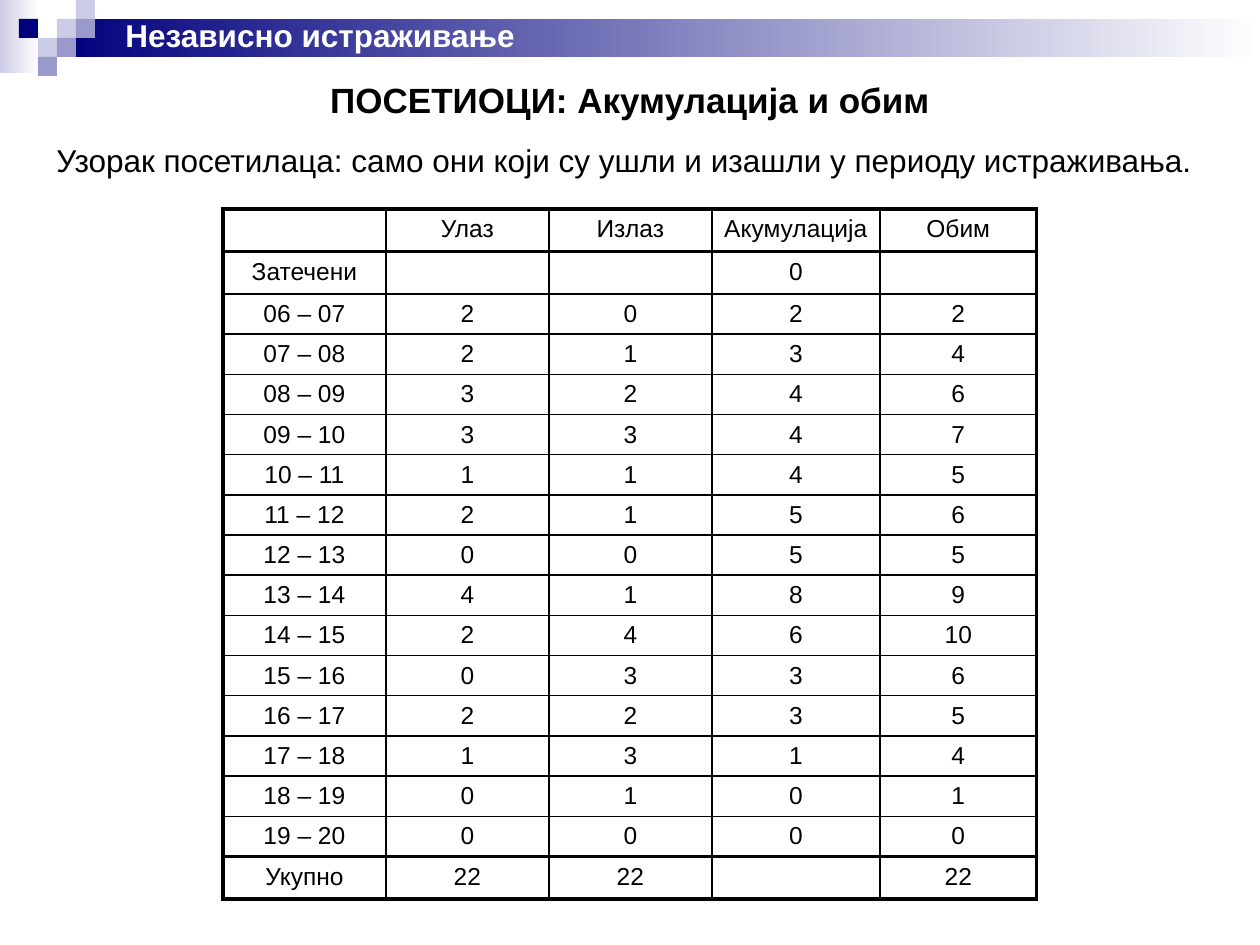
from dataclasses import dataclass

from lxml.etree import SubElement
from pptx import Presentation
from pptx.dml.color import RGBColor
from pptx.enum.shapes import MSO_SHAPE
from pptx.enum.text import MSO_ANCHOR, MSO_AUTO_SIZE, PP_ALIGN
from pptx.oxml.ns import qn
from pptx.util import Emu, Inches, Pt


@dataclass(frozen=True)
class Theme:
    """Colours, font and type sizes in points."""

    font: str = "Arial"
    ink: str = "000000"
    white: str = "FFFFFF"
    navy: str = "00007D"
    violet: str = "9999CC"
    lilac: str = "CCCCE6"
    title_size: int = 20
    text_size: int = 18
    table_size: int = 14
    thin: float = 1
    thick: float = 2.25


@dataclass(frozen=True)
class Area:
    """A rectangle in px."""

    left: int
    top: int
    width: int
    height: int

    def emu(self) -> tuple:
        """Return the rectangle in EMU."""
        return tuple(px(n) for n in (self.left, self.top, self.width, self.height))


@dataclass(frozen=True)
class Tile:
    """One square of the corner mosaic, by grid column and row."""

    column: int
    row: int
    color: str


THEME = Theme()
SCALE = Inches(10) / 1260
TILE = 19
TILES = [
    Tile(3, 1, THEME.lilac),
    Tile(4, 0, THEME.lilac),
    Tile(4, 1, THEME.violet),
    Tile(2, 2, THEME.lilac),
    Tile(1, 1, THEME.navy),
    Tile(3, 2, THEME.violet),
    Tile(2, 3, THEME.violet),
]
COLUMN_WIDTHS = [163, 163, 163, 168, 157]
ROW_HEIGHT = 40
HOURLY = [
    (2, 0, 2, 2), (2, 1, 3, 4), (3, 2, 4, 6), (3, 3, 4, 7), (1, 1, 4, 5),
    (2, 1, 5, 6), (0, 0, 5, 5), (4, 1, 8, 9), (2, 4, 6, 10), (0, 3, 3, 6),
    (2, 2, 3, 5), (1, 3, 1, 4), (0, 1, 0, 1), (0, 0, 0, 0),
]
ROWS = [
    ("", "Улаз", "Излаз", "Акумулација", "Обим"),
    ("Затечени", "", "", 0, ""),
    *((f"{hour:02} – {hour + 1:02}", *counts) for hour, counts in enumerate(HOURLY, 6)),
    ("Укупно", 22, 22, "", 22),
]


def px(length: int) -> Emu:
    """Turn px into EMU."""
    return Emu(round(length * SCALE))


def add_span(para, text: str, size: int, color: str, bold: bool = False) -> None:
    """Add one formatted run."""
    span = para.add_run()
    span.text = text
    span.font.name = THEME.font
    span.font.size = Pt(size)
    span.font.bold = bold
    span.font.color.rgb = RGBColor.from_string(color)


def add_block(page, area: Area, *colors: str) -> None:
    """Draw a borderless rectangle, plain or fading between two colours."""
    box = page.shapes.add_shape(MSO_SHAPE.RECTANGLE, *area.emu())
    box.shadow.inherit = False
    box.line.fill.background()
    if len(colors) == 1:
        box.fill.solid()
        box.fill.fore_color.rgb = RGBColor.from_string(colors[0])
        return
    box.fill.gradient()
    box.fill.gradient_angle = 0
    for stop, color in zip(box.fill.gradient_stops, colors):
        stop.color.rgb = RGBColor.from_string(color)


def add_text(page, area: Area, text: str, color: str, bold: bool = False) -> None:
    """Add a wrapped line of running text."""
    frame = page.shapes.add_textbox(*area.emu()).text_frame
    frame.word_wrap = True
    frame.auto_size = MSO_AUTO_SIZE.SHAPE_TO_FIT_TEXT
    add_span(frame.paragraphs[0], text, THEME.text_size, color, bold)


def set_title(page, area: Area, text: str) -> None:
    """Place and fill the title placeholder."""
    title = page.shapes.title
    title.left, title.top, title.width, title.height = area.emu()
    title.text_frame.vertical_anchor = MSO_ANCHOR.MIDDLE
    para = title.text_frame.paragraphs[0]
    para.alignment = PP_ALIGN.CENTER
    add_span(para, text, THEME.title_size, THEME.ink, bold=True)


def set_borders(cell, thick_sides: dict[str, bool]) -> None:
    """Line the four sides of a cell, heavy where flagged."""
    properties = cell._tc.get_or_add_tcPr()
    for side, heavy in thick_sides.items():
        width = Pt(THEME.thick if heavy else THEME.thin)
        line = SubElement(properties, qn(f"a:ln{side}"), w=str(width))
        fill = SubElement(line, qn("a:solidFill"))
        SubElement(fill, qn("a:srgbClr"), val=THEME.ink)


def add_counts(page, left: int, top: int) -> None:
    """Build the table of visitor counts."""
    last_row, last_column = len(ROWS) - 1, len(COLUMN_WIDTHS) - 1
    area = Area(left, top, sum(COLUMN_WIDTHS), ROW_HEIGHT * len(ROWS))
    table = page.shapes.add_table(len(ROWS), len(COLUMN_WIDTHS), *area.emu()).table
    table.first_row = table.horz_banding = False
    for column, width in zip(table.columns, COLUMN_WIDTHS):
        column.width = px(width)
    for r, values in enumerate(ROWS):
        table.rows[r].height = px(ROW_HEIGHT)
        for c, value in enumerate(values):
            cell = table.cell(r, c)
            cell.margin_left = cell.margin_right = px(8)
            set_borders(cell, {
                "L": c == 0,
                "R": c == last_column,
                "T": r in (0, 1, last_row),
                "B": r in (0, last_row - 1, last_row),
            })
            cell.fill.background()
            para = cell.text_frame.paragraphs[0]
            para.alignment = PP_ALIGN.CENTER
            if value == "":
                size = str(THEME.table_size * 100)
                SubElement(para._p, qn("a:endParaRPr"), sz=size)
            else:
                add_span(para, str(value), THEME.table_size, THEME.ink)


def main() -> None:
    """Build and save the deck."""
    deck = Presentation()
    deck.slide_width, deck.slide_height = px(1260), px(945)
    page = deck.slides.add_slide(deck.slide_layouts[5])
    add_block(page, Area(0, 0, 39, 73), THEME.lilac, THEME.white)
    add_block(page, Area(3 * TILE, TILE, 1260 - 3 * TILE, 2 * TILE), THEME.navy, THEME.white)
    for tile in TILES:
        area = Area(tile.column * TILE, tile.row * TILE, TILE, TILE)
        add_block(page, area, tile.color)
    set_title(page, Area(63, 63, 1134, 72), "ПОСЕТИОЦИ: Акумулација и обим")
    add_counts(page, left=223, top=209)
    add_text(
        page,
        Area(44, 135, 1171, 50),
        "Узорак посетилаца: само они који су ушли и изашли у периоду истраживања.",
        THEME.ink,
    )
    add_text(page, Area(113, 10, 704, 50), "Независно истраживање", THEME.white, bold=True)
    deck.save("out.pptx")


if __name__ == "__main__":
    main()
